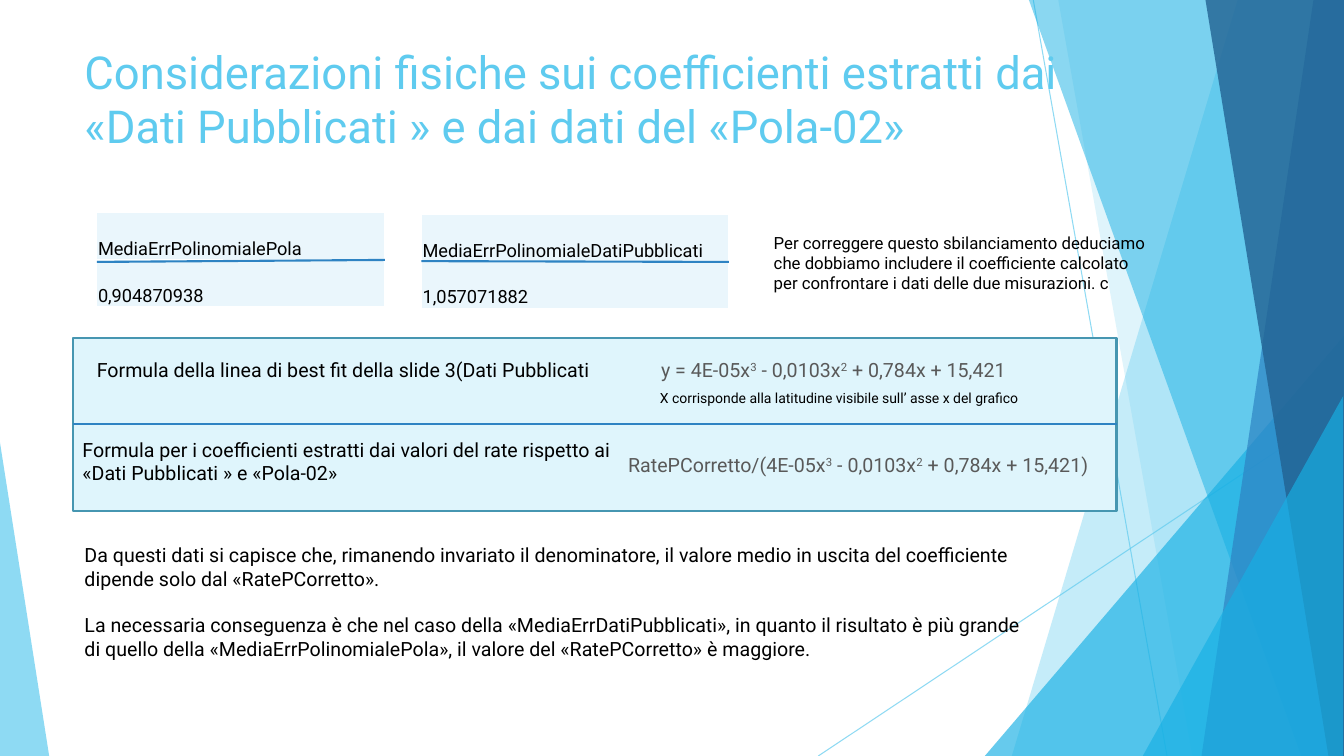
from collections import namedtuple

import pptx
import pptx.dml.color
import pptx.enum.shapes
import pptx.enum.text
import pptx.oxml.ns
import pptx.util
from lxml import etree

Cm = pptx.util.Cm
RGBColor = pptx.dml.color.RGBColor
MSO_SHAPE = pptx.enum.shapes.MSO_SHAPE
PP_ALIGN = pptx.enum.text.PP_ALIGN
qn = pptx.oxml.ns.qn

SKY = RGBColor(0x5F, 0xCB, 0xEF)
CYAN = RGBColor(0x17, 0xB0, 0xE4)
BLUE = RGBColor(0x2E, 0x83, 0xC3)
NAVY = RGBColor(0x22, 0x62, 0x92)
PANEL_FILL = RGBColor(0xDF, 0xF5, 0xFC)
PANEL_LINE = RGBColor(0x46, 0x96, 0xB1)
CELL_FILL = RGBColor(0xEA, 0xF6, 0xFC)
BLACK = RGBColor(0, 0, 0)
GREY = RGBColor(0x59, 0x59, 0x59)
FONT = "Roboto"
POLYNOMIAL = "4E-05x^3^ - 0,0103x^2^ + 0,784x + 15,421"

# All box values are centimetres.
Box = namedtuple("Box", "left top width height")


def inside(box, left, top, width, height):
    """Return a box placed relative to the corner of another one."""
    return Box(box.left + left, box.top + top, width, height)


def emu(box):
    return [Cm(value) for value in box]


def set_opacity(shape, percent):
    color = shape.element.spPr.find(".//" + qn("a:srgbClr"))
    etree.SubElement(color, qn("a:alpha")).set("val", str(percent * 1000))


def paint_pane(shape, color, opacity):
    shape.shadow.inherit = False
    shape.fill.solid()
    shape.fill.fore_color.rgb = color
    set_opacity(shape, opacity)
    shape.line.fill.background()


def add_line(slide, start, end, color, width):
    line = slide.shapes.add_connector(
        pptx.enum.shapes.MSO_CONNECTOR.STRAIGHT, *emu(start + end))
    line.line.color.rgb = color
    line.line.width = pptx.util.Pt(width)
    etree.SubElement(line.element.spPr, qn("a:effectLst"))
    return line


def format_runs(paragraph, size, color):
    for run in paragraph.runs:
        run.font.name = FONT
        run.font.size = pptx.util.Pt(size)
        run.font.bold = False
        run.font.color.rgb = color


def add_text(slide, box, text, size, color=BLACK, gap=0):
    frame = slide.shapes.add_textbox(*emu(box)).text_frame
    frame.word_wrap = True
    frame.text = text
    for index, paragraph in enumerate(frame.paragraphs):
        format_runs(paragraph, size, color)
        if index:
            paragraph.space_before = pptx.util.Pt(gap)


def add_formula(slide, box, formula):
    """Write a centred formula whose exponents stand between carets."""
    frame = slide.shapes.add_textbox(*emu(box)).text_frame
    frame.word_wrap = True
    paragraph = frame.paragraphs[0]
    paragraph.alignment = PP_ALIGN.CENTER
    for index, part in enumerate(formula.split("^")):
        run = paragraph.add_run()
        run.text = part
        if index % 2:
            run.font.size = pptx.util.Pt(14)
            run._r.get_or_add_rPr().set("baseline", "30000")
    format_runs(paragraph, 14, GREY)


def add_backdrop(slide, box):
    right, bottom = box.left + box.width, box.top + box.height

    def add_slanted(top_x, bottom_x, color, opacity):
        corners = [(right, box.top), (right, bottom), (box.left + bottom_x, bottom)]
        builder = slide.shapes.build_freeform(Cm(box.left + top_x), Cm(box.top))
        builder.add_line_segments([(Cm(x), Cm(y)) for x, y in corners])
        paint_pane(builder.convert_to_shape(), color, opacity)

    def add_triangle(left, width, height, apex, color, opacity):
        place = Box(box.left + left, bottom - height, width, height)
        triangle = slide.shapes.add_shape(MSO_SHAPE.ISOSCELES_TRIANGLE, *emu(place))
        triangle.adjustments[0] = apex
        paint_pane(triangle, color, opacity)

    for start, end in [((26.04, 0), (29.41, 19.05)), ((33.87, 10.24), (20.62, 19.05))]:
        line = add_line(slide, (box.left + start[0], box.top + start[1]),
                        (box.left + end[0], box.top + end[1]), SKY, 0.75)
        set_opacity(line, 70)

    add_slanted(31.19, 25.5, SKY, 36)
    add_slanted(26.67, 30.05, SKY, 20)
    add_triangle(24.82, 9.05, 10.59, 1, CYAN, 66)
    add_slanted(25.93, 32.79, CYAN, 50)
    add_slanted(33.1, 30.28, BLUE, 70)
    add_slanted(30.38, 33.48, NAVY, 80)
    add_triangle(28.8, 5.05, 9.07, 1, CYAN, 66)
    add_triangle(0, 1.24, 7.9, 0, SKY, 70)


def add_mean_error(slide, box, name, value, rule_start, rule_end):
    """Table with a name over its value, parted by a slightly tilted rule."""
    table = slide.shapes.add_table(2, 1, *emu(box)).table
    table.first_row = table.horz_banding = False
    for row, text in zip(table.rows, (name, value)):
        row.height = Cm(box.height / 2)
        cell = row.cells[0]
        cell.margin_left = cell.margin_right = cell.margin_top = Cm(0.03)
        cell.margin_bottom = 0
        cell.vertical_anchor = pptx.enum.text.MSO_ANCHOR.BOTTOM
        cell.fill.solid()
        cell.fill.fore_color.rgb = CELL_FILL
        cell.text_frame.text = text
        format_runs(cell.text_frame.paragraphs[0], 13, BLACK)
    add_line(slide, (box.left, box.top + rule_start),
             (box.left + box.width, box.top + rule_end), BLUE, 1.5)


def add_formula_panel(slide, box):
    panel = slide.shapes.add_shape(MSO_SHAPE.RECTANGLE, *emu(box))
    panel.shadow.inherit = False
    panel.fill.solid()
    panel.fill.fore_color.rgb = PANEL_FILL
    panel.line.color.rgb = PANEL_LINE
    panel.line.width = pptx.util.Pt(1.5)

    middle = box.top + box.height / 2
    divider = add_line(slide, (box.left, middle), (box.left + box.width, middle), BLUE, 1.5)
    divider.begin_connect(panel, 1)
    divider.end_connect(panel, 3)

    add_text(slide, inside(box, 0.36, 0.38, 14.43, 0.86),
             "Formula della linea di best fit della slide 3(Dati Pubblicati", 14)
    add_formula(slide, inside(box, 14.3, 0.38, 9.75, 0.86), "y = " + POLYNOMIAL)
    add_text(slide, inside(box, 14.55, 1.17, 11.18, 1.12),
             "X corrisponde alla latitudine visibile sull’ asse x del grafico", 10)
    add_text(slide, inside(box, 0, 2.39, 13.94, 1.45),
             "Formula per i coefficienti estratti dai valori del rate rispetto ai "
             "«Dati Pubblicati » e «Pola-02»", 14)
    add_formula(slide, inside(box, 12.98, 2.77, 13.64, 0.86),
                "RatePCorretto/(" + POLYNOMIAL + ")")


def main():
    presentation = pptx.Presentation()
    presentation.slide_width, presentation.slide_height = Cm(33.87), Cm(19.05)
    slide = presentation.slides.add_slide(presentation.slide_layouts[6])

    add_backdrop(slide, Box(0, 0, 33.87, 19.05))
    add_text(slide, Box(1.88, 0.98, 25.02, 3), "Considerazioni fisiche sui coefficienti "
             "estratti dai «Dati Pubblicati » e dai dati del «Pola-02»", 32.4, SKY)
    add_mean_error(slide, Box(2.44, 5.36, 7.26, 2.36),
                   "MediaErrPolinomialePola", "0,904870938", 1.24, 1.19)
    add_mean_error(slide, Box(10.62, 5.41, 7.75, 2.36),
                   "MediaErrPolinomialeDatiPubblicati", "1,057071882", 1.17, 1.19)
    add_text(slide, Box(19.25, 5.74, 10.03, 1.8),
             "Per correggere questo sbilanciamento deduciamo che dobbiamo includere il "
             "coefficiente calcolato per confrontare i dati delle due misurazioni. c", 12)
    add_formula_panel(slide, Box(1.83, 8.51, 26.31, 4.37))
    add_text(slide, Box(1.88, 13.56, 24.23, 3.25),
             "Da questi dati si capisce che, rimanendo invariato il denominatore, il valore "
             "medio in uscita del coefficiente dipende solo dal «RatePCorretto».\n"
             "La necessaria conseguenza è che nel caso della «MediaErrDatiPubblicati», in "
             "quanto il risultato è più grande di quello della «MediaErrPolinomialePola», "
             "il valore del «RatePCorretto» è maggiore.", 14, gap=16.5)
    presentation.save("out.pptx")


if __name__ == "__main__":
    main()
